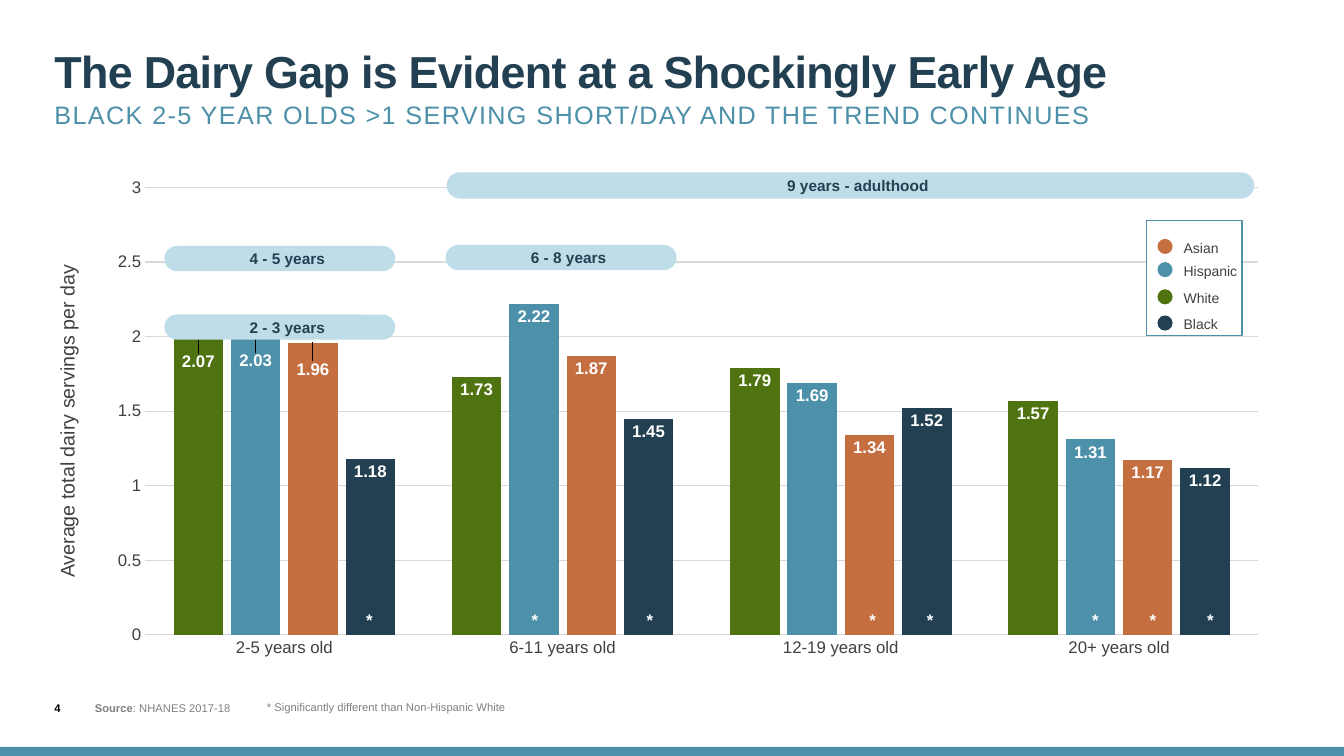
from dataclasses import dataclass

from lxml.etree import SubElement
from pptx import Presentation
from pptx.chart.data import CategoryChartData
from pptx.dml.color import RGBColor
from pptx.enum.chart import XL_CHART_TYPE, XL_LABEL_POSITION, XL_TICK_MARK
from pptx.enum.shapes import MSO_SHAPE
from pptx.enum.text import MSO_ANCHOR, MSO_AUTO_SIZE, PP_ALIGN
from pptx.oxml import parse_xml
from pptx.oxml.ns import nsdecls, qn
from pptx.util import Inches, Pt


@dataclass(frozen=True)
class Theme:
    font = "Arial"
    navy = RGBColor.from_string("224051")
    teal = RGBColor.from_string("4C90A9")
    green = RGBColor.from_string("4F7310")
    orange = RGBColor.from_string("C56E40")
    pale = RGBColor.from_string("BFDDE9")
    text = RGBColor.from_string("404040")
    muted = RGBColor.from_string("808080")
    grid = RGBColor.from_string("D9D9D9")
    white = RGBColor.from_string("FFFFFF")
    black = RGBColor.from_string("000000")
    title_size = Pt(32)
    subtitle_size = Pt(18)
    axis_title_size = Pt(14)
    chart_size = Pt(12)
    pill_size = Pt(11)
    legend_size = Pt(10)
    note_size = Pt(8)


theme = Theme()


def write(holder, runs, size, color, align=PP_ALIGN.LEFT, anchor=MSO_ANCHOR.MIDDLE, left=0, top=0, wrap=True):
    """Fill a text holder with (wording, bold) runs."""
    frame = holder.text_frame
    layout = {"auto_size": MSO_AUTO_SIZE.NONE, "word_wrap": wrap, "vertical_anchor": anchor,
              "margin_left": Inches(left), "margin_top": Inches(top), "margin_right": 0, "margin_bottom": 0}
    for name, value in layout.items():
        setattr(frame, name, value)
    paragraph = frame.paragraphs[0]
    paragraph.alignment = align
    for wording, bold in runs:
        run = paragraph.add_run()
        run.text = wording
        for name, value in {"name": theme.font, "size": size, "bold": bold}.items():
            setattr(run.font, name, value)
        run.font.color.rgb = color
    return paragraph


def draw(kind, box, fill, line=None):
    """Add a flat preset shape, outlined only when a line colour is given."""
    shape = slide.shapes.add_shape(kind, *map(Inches, box))
    shape.shadow.inherit = False
    shape.fill.solid()
    shape.fill.fore_color.rgb = fill
    if line is None:
        shape.line.fill.background()
    else:
        shape.line.color.rgb = line
        shape.line.width = Pt(1)
    return shape


deck = Presentation()
deck.slide_width, deck.slide_height = Inches(13.33), Inches(7.5)
slide = deck.slides.add_slide(deck.slide_layouts[1])

# Title and subtitle
headline, subtitle = slide.placeholders
headings = [
    (headline, (0.54, 0.54, 10.68, 0.27), "The Dairy Gap is Evident at a Shockingly Early Age",
     theme.title_size, theme.navy, True, MSO_ANCHOR.TOP, 0.8, "-50"),
    (subtitle, (0.54, 0.96, 10.68, 0.36), "BLACK 2-5 YEAR OLDS >1 SERVING SHORT/DAY AND THE TREND CONTINUES",
     theme.subtitle_size, theme.teal, False, MSO_ANCHOR.MIDDLE, 1.0, "100"),
]
for heading, box, wording, size, color, bold, anchor, line_spacing, tracking in headings:
    for name, value in zip(("left", "top", "width", "height"), box):
        setattr(heading, name, Inches(value))
    properties = heading.text_frame.paragraphs[0]._p.get_or_add_pPr()
    properties.set("marL", "0")
    properties.set("indent", "0")
    SubElement(properties, qn("a:buNone"))
    paragraph = write(heading, [(wording, bold)], size, color, anchor=anchor)
    paragraph.line_spacing = line_spacing
    paragraph.space_before = 0
    paragraph.runs[0].font._element.set("spc", tracking)

# Bottom band
draw(MSO_SHAPE.RECTANGLE, (0, 7.41, 13.33, 0.09), theme.teal)

# Servings chart: values, label drop of the first bar
servings = [
    ("Series 1", (2.07, 1.73, 1.79, 1.57), theme.green, 0.23),
    ("Series 2", (2.03, 2.22, 1.69, 1.31), theme.teal, 0.16),
    ("Series 3", (1.96, 1.87, 1.34, 1.17), theme.orange, 0.14),
    ("Series 4", (1.18, 1.45, 1.52, 1.12), theme.navy, 0),
]
data = CategoryChartData()
data.categories = ["2-5 years old", "6-11 years old", "12-19 years old", "20+ years old"]
for name, values, _, _ in servings:
    data.add_series(name, values)
chart_left, chart_top, chart_width, chart_height = 0.94, 1.68, 11.78, 4.95
chart = slide.shapes.add_chart(XL_CHART_TYPE.COLUMN_CLUSTERED, Inches(chart_left), Inches(chart_top),
                               Inches(chart_width), Inches(chart_height), data).chart
chart.has_legend = chart.has_title = False
chart.font.name = theme.font
chart.font.size = theme.chart_size
chart.font.color.rgb = theme.text

plot = chart.plots[0]
for name, value in {"gap_width": 115, "overlap": -16, "vary_by_categories": False}.items():
    setattr(plot, name, value)
for series, (_, _, color, drop) in zip(plot.series, servings):
    series.format.fill.solid()
    series.format.fill.fore_color.rgb = color
    series.data_labels.show_value = True
    bar_labels = [series.data_labels]
    if drop:
        bar_labels.append(series.points[0].data_label)
    for label in bar_labels:
        for name, value in {"name": theme.font, "size": theme.chart_size, "bold": True}.items():
            setattr(label.font, name, value)
        label.font.color.rgb = theme.white
        label.position = XL_LABEL_POSITION.INSIDE_END
    if drop:
        first_label = series.data_labels._element.find(qn("c:dLbl"))
        first_label.insert(1, parse_xml(
            f'<c:layout {nsdecls("c")}><c:manualLayout><c:x val="0"/>'
            f'<c:y val="{drop / chart_height}"/></c:manualLayout></c:layout>'))

# Axes and plot area
value_axis, category_axis = chart.value_axis, chart.category_axis
for name, value in {"minimum_scale": 0, "maximum_scale": 3, "major_unit": 0.5}.items():
    setattr(value_axis, name, value)
for axis in (value_axis, category_axis):
    axis.major_tick_mark = axis.minor_tick_mark = XL_TICK_MARK.NONE
value_axis.format.line.fill.background()
for line in (value_axis.major_gridlines.format.line, category_axis.format.line):
    line.color.rgb = theme.grid
    line.width = Pt(0.75)
plot_place = {"x": (1.44 - chart_left) / chart_width, "y": (1.86 - chart_top) / chart_height,
              "w": 11.04 / chart_width, "h": 4.44 / chart_height}
plot_area = chart._chartSpace.chart.plotArea
for old_layout in plot_area.findall(qn("c:layout")):
    plot_area.remove(old_layout)
plot_area.insert(0, parse_xml(
    f'<c:layout {nsdecls("c")}><c:manualLayout><c:layoutTarget val="inner"/>'
    '<c:xMode val="edge"/><c:yMode val="edge"/>'
    + "".join(f'<c:{side} val="{share}"/>' for side, share in plot_place.items())
    + "</c:manualLayout></c:layout>"))

axis_title = slide.shapes.add_textbox(Inches(-1.61), Inches(4.03), Inches(4.61), Inches(0.3))
axis_title.rotation = 270
write(axis_title, [("Average total dairy servings per day", False)], theme.axis_title_size, theme.text,
      PP_ALIGN.CENTER, MSO_ANCHOR.TOP)

# Significance stars as (age group, bar)
for group, bar in [(0, 3), (1, 1), (1, 3), (2, 2), (2, 3), (3, 1), (3, 2), (3, 3)]:
    star = slide.shapes.add_textbox(Inches(1.77 + 2.78 * group + 0.57 * bar), Inches(6.02),
                                    Inches(0.37), Inches(0.25))
    write(star, [("*", True)], theme.chart_size, theme.white, PP_ALIGN.CENTER)

# Age range pills
for wording, box in [("4 - 5 years", (1.63, 2.44, 2.29, 0.25)),
                     ("6 - 8 years", (4.42, 2.43, 2.29, 0.25)),
                     ("9 years - adulthood", (4.43, 1.71, 8.01, 0.26)),
                     ("2 - 3 years", (1.63, 3.12, 2.29, 0.25))]:
    pill = draw(MSO_SHAPE.ROUNDED_RECTANGLE, box, theme.pale)
    pill.adjustments[0] = 0.5
    write(pill, [(wording, True)], theme.pill_size, theme.navy, PP_ALIGN.CENTER, left=0.15)

# Legend
draw(MSO_SHAPE.RECTANGLE, (11.37, 2.19, 0.95, 1.14), theme.white, theme.teal)
for ethnicity, color, top in [("Asian", theme.orange, 2.37), ("Hispanic", theme.teal, 2.6),
                              ("White", theme.green, 2.87), ("Black", theme.navy, 3.13)]:
    draw(MSO_SHAPE.OVAL, (11.48, top, 0.15, 0.15), color)
    entry = slide.shapes.add_textbox(Inches(11.74), Inches(top + 0.01), Inches(0.57), Inches(0.15))
    write(entry, [(ethnicity, False)], theme.legend_size, theme.text)

# Footer
source = slide.shapes.add_textbox(Inches(0.94), Inches(6.82), Inches(4.09), Inches(0.4))
write(source, [("Source", True), (": NHANES 2017-18", False)], theme.note_size, theme.muted)
page_number = slide.shapes.add_textbox(Inches(0.54), Inches(6.82), Inches(0.6), Inches(0.4))
write(page_number, [("4", True)], theme.note_size, theme.black)
footnote = slide.shapes.add_textbox(Inches(2.55), Inches(6.9), Inches(2.6), Inches(0.24))
write(footnote, [("* Significantly different than Non-Hispanic White", False)], theme.note_size, theme.muted,
      anchor=MSO_ANCHOR.TOP, left=0.1, top=0.05, wrap=False)

deck.save("out.pptx")
